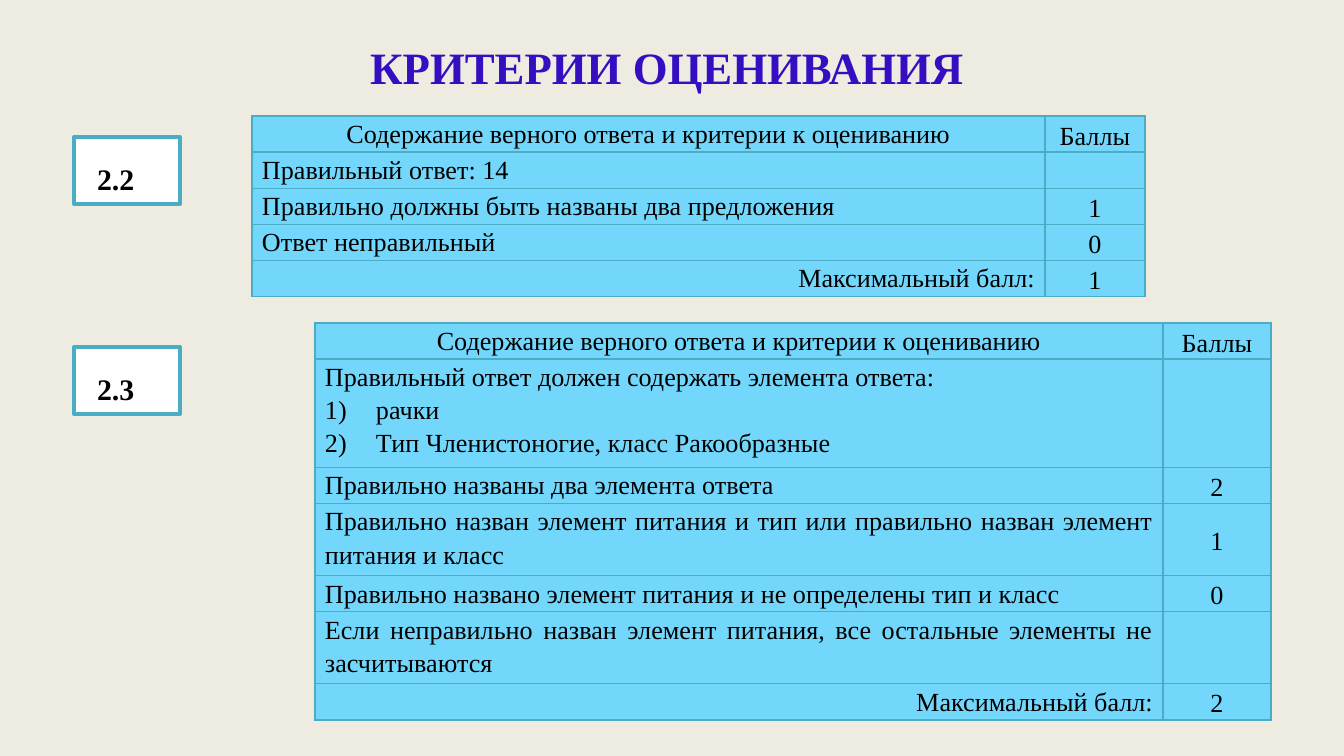
from lxml import etree
from pptx import Presentation
from pptx import util as u
from pptx.dml.color import RGBColor
from pptx.enum import shapes, text
from pptx.oxml import ns

PX = 9144000 / 1344
FONT = "Times New Roman"
SAND = RGBColor(0xEE, 0xEC, 0xE1)
SKY = RGBColor(0x73, 0xD7, 0xFC)
TEAL = RGBColor(0x4B, 0xAC, 0xC6)
WHITE = RGBColor(0xFF, 0xFF, 0xFF)
BLACK = RGBColor(0, 0, 0)
VIOLET = RGBColor(0x35, 0x0E, 0xC2)
LEFT, MID, RIGHT, FULL = (text.PP_ALIGN.LEFT, text.PP_ALIGN.CENTER,
                          text.PP_ALIGN.RIGHT, text.PP_ALIGN.JUSTIFY)
HEAD = ("Содержание верного ответа и критерии к оцениванию", "Баллы", MID)
TOTAL = "Максимальный балл:"

FIRST = [
    HEAD,
    ("Правильный ответ: 14", "", FULL),
    ("Правильно должны быть названы два предложения", "1", FULL),
    ("Ответ неправильный", "0", FULL),
    (TOTAL, "1", RIGHT),
]
SECOND = [
    HEAD,
    ("Правильный ответ должен содержать элемента ответа:\nрачки\n"
     "Тип Членистоногие, класс Ракообразные", "", FULL),
    ("Правильно названы два элемента ответа", "2", FULL),
    ("Правильно назван элемент питания и тип или правильно назван "
     "элемент питания и класс", "1", FULL),
    ("Правильно названо элемент питания и не определены тип и класс", "0", LEFT),
    ("Если неправильно назван элемент питания, все остальные элементы "
     "не засчитываются", "", FULL),
    (TOTAL, "2", RIGHT),
]


def px(n):
    """Turn pixels into EMU."""
    return u.Emu(round(n * PX))


def style(para, size, color, bold=False):
    """Format every run of a paragraph."""
    for run in para.runs:
        font = run.font
        font.name, font.size, font.bold = FONT, u.Pt(size), bold
        font.color.rgb = color


def add_title(slide, box, words):
    """Place the centred heading in its box."""
    frame = slide.shapes.add_textbox(*map(px, box)).text_frame
    frame.word_wrap = True
    frame.vertical_anchor = text.MSO_ANCHOR.MIDDLE
    frame.text = words
    frame.paragraphs[0].alignment = MID
    style(frame.paragraphs[0], 24, VIOLET, True)


def add_badge(slide, box, label):
    """Place the framed task number in its box."""
    badge = slide.shapes.add_shape(shapes.MSO_SHAPE.RECTANGLE, *map(px, box))
    badge.shadow.inherit = False
    badge.fill.solid()
    badge.fill.fore_color.rgb = WHITE
    badge.line.color.rgb = TEAL
    badge.line.width = u.Pt(2)
    frame = badge.text_frame
    frame.margin_left, frame.margin_top, frame.margin_bottom = px(23), px(24), 0
    frame.vertical_anchor = text.MSO_ANCHOR.TOP
    frame.text = label
    frame.paragraphs[0].alignment = LEFT
    style(frame.paragraphs[0], 16, BLACK, True)


def add_edges(cell):
    """Draw a thin line on all four sides of a cell."""
    props = cell._tc.get_or_add_tcPr()
    for side in "LRTB":
        edge = etree.SubElement(props, ns.qn("a:ln" + side), w=str(u.Pt(0.79)))
        fill = etree.SubElement(edge, ns.qn("a:solidFill"))
        etree.SubElement(fill, ns.qn("a:srgbClr"), val=str(TEAL))


def fill_cell(cell, words, align):
    """Write and format one cell, numbering the lines after the first."""
    add_edges(cell)
    cell.fill.solid()
    cell.fill.fore_color.rgb = SKY
    cell.margin_left = cell.margin_right = px(10)
    cell.margin_top = cell.margin_bottom = 0
    cell.text = words
    for i, para in enumerate(cell.text_frame.paragraphs):
        para.alignment = align
        para.line_spacing = 1.15
        style(para, 14, BLACK)
        if not words:
            etree.SubElement(para._p, ns.qn("a:endParaRPr"), sz="1400")
        if i:
            props = para._p.get_or_add_pPr()
            props.set("marL", str(px(51)))
            props.set("indent", str(-px(51)))
            etree.SubElement(props, ns.qn("a:buFont"), typeface=FONT)
            etree.SubElement(props, ns.qn("a:buAutoNum"), type="arabicParenR")


def add_grid(slide, box, score, rows, lines):
    """Place a criteria table whose rows share the box by line count."""
    left, top, width, height = box
    grid = slide.shapes.add_table(len(rows), 2, *map(px, box)).table
    grid.columns[0].width, grid.columns[1].width = px(width - score), px(score)
    for i, (words, mark, align) in enumerate(rows):
        grid.rows[i].height = px(height * lines[i] / sum(lines))
        fill_cell(grid.cell(i, 0), words, align)
        fill_cell(grid.cell(i, 1), mark, MID)
        grid.cell(i, 1).vertical_anchor = text.MSO_ANCHOR.MIDDLE


def main():
    """Build and save the slide."""
    deck = Presentation()
    deck.slide_width, deck.slide_height = px(1344), px(756)
    slide = deck.slides.add_slide(deck.slide_layouts[6])
    slide.background.fill.solid()
    slide.background.fill.fore_color.rgb = SAND
    add_title(slide, (16, 19, 1302, 95), "КРИТЕРИИ ОЦЕНИВАНИЯ")
    add_badge(slide, (74, 137, 106, 67), "2.2")
    add_grid(slide, (252, 116, 893, 180), 100, FIRST, [1] * 5)
    add_badge(slide, (74, 347, 106, 67), "2.3")
    add_grid(slide, (315, 323, 956, 397), 108, SECOND, [1, 3, 1, 2, 1, 2, 1])
    deck.save("out.pptx")


if __name__ == "__main__":
    main()
